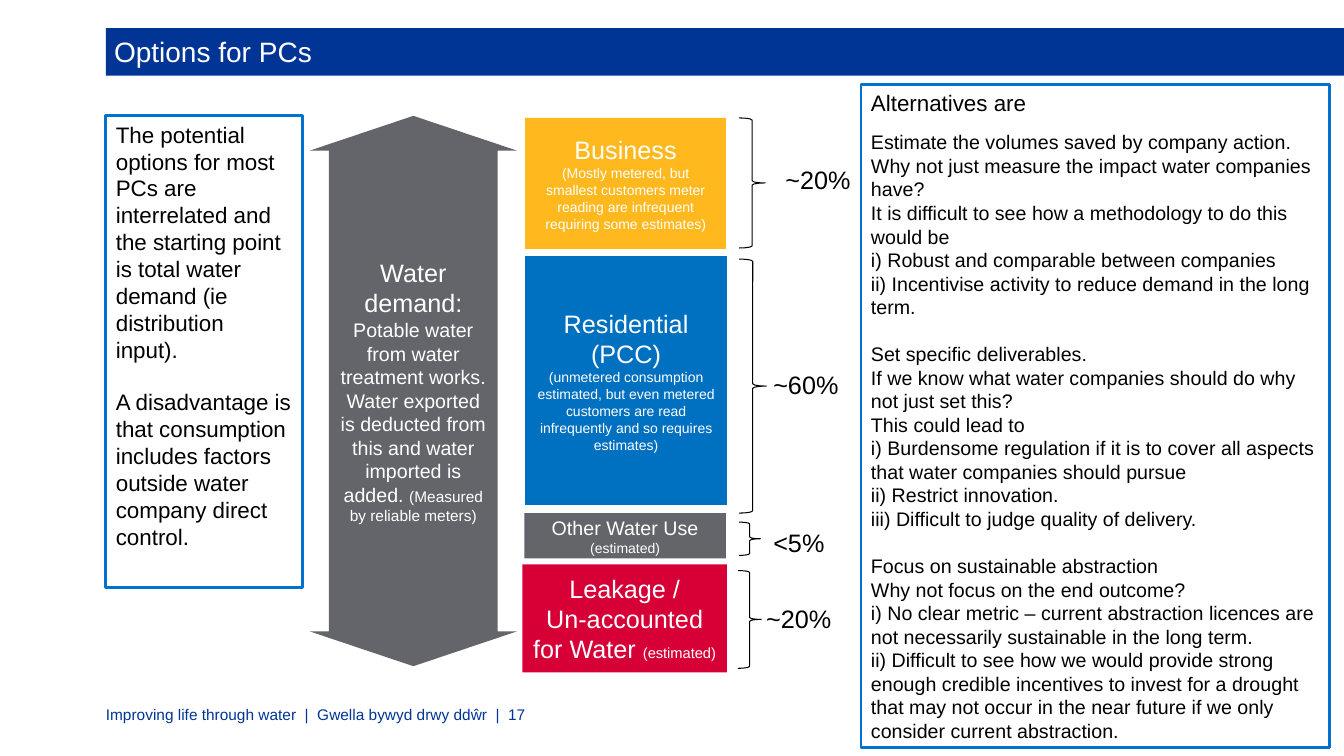
import lxml.etree
import pptx
import pptx.dml.color
import pptx.enum.shapes
import pptx.enum.text
import pptx.oxml.ns
import pptx.util

SHAPE = pptx.enum.shapes.MSO_SHAPE
ALIGN = pptx.enum.text.PP_ALIGN
ANCHOR = pptx.enum.text.MSO_ANCHOR
NAVY, BLUE, GREY, WHITE, BLACK = "003595", "0071CE", "63656A", "FFFFFF", "000000"
NO_BREAK_SPACE = chr(160)

deck = pptx.Presentation()
deck.slide_width = pptx.util.Inches(13.33)
deck.slide_height = pptx.util.Inches(7.5)
percent_wide, percent_high = deck.slide_width / 100, deck.slide_height / 100
slide = deck.slides.add_slide(deck.slide_layouts[6])


def paint(fill, color):
    if color:
        fill.solid()
        fill.fore_color.rgb = pptx.dml.color.RGBColor.from_string(color)
    else:
        fill.background()


def write(shape, text, size=18, color=WHITE, align=ALIGN.CENTER, gap=0, same_line=False):
    """Add a paragraph to the shape, or extend its last one when same_line is set."""
    frame = shape.text_frame
    if frame.text and not same_line:
        frame.add_paragraph()
    paragraph = frame.paragraphs[-1]
    if not same_line:
        paragraph.alignment = align
        paragraph.space_before = pptx.util.Pt(gap)
    run = paragraph.add_run()
    run.text = text
    run.font.name = "Arial"
    run.font.size = pptx.util.Pt(size)
    paint(run.font.fill, color)


# Left, top, width and height are percentages of the slide; insets are points.
inset, flush = (7.2, 3.6, 7.2, 3.6), (0, 0, 0, 0)
middle, top = ANCHOR.MIDDLE, ANCHOR.TOP
layout = {
    "footer": (SHAPE.RECTANGLE, (7.88, 93.2, 51.16, 2.53), None, None, middle, flush),
    "title": (SHAPE.RECTANGLE, (7.88, 3.73, 92.12, 6.27), NAVY, None, middle, (5.8, 2.9, 28, 3.2)),
    "residential": (SHAPE.RECTANGLE, (39.08, 33.87, 15, 32.93), "0070C0", None, middle, inset),
    "business": (SHAPE.RECTANGLE, (39.08, 15.6, 14.93, 17.33), "FFB81D", None, middle, inset),
    "other use": (SHAPE.RECTANGLE, (39.01, 67.87, 15, 6), GREY, None, middle, inset),
    "leakage": (SHAPE.RECTANGLE, (38.86, 74.67, 15.23, 14.27), "D60037", None, middle, inset),
    "demand": (SHAPE.UP_DOWN_ARROW, (23.03, 15.33, 15.45, 72.8), GREY, None, middle, inset),
    "starting point": (SHAPE.RECTANGLE, (7.88, 15.33, 14.63, 62.4), WHITE, BLUE, top, inset),
    "alternatives": (SHAPE.RECTANGLE, (64.07, 11.2, 34.88, 87.73), WHITE, BLUE, top, (7.2, 3, 7.2, 0)),
}

# Brace area, then left and top of the share of demand written beside it.
demand_shares = [
    ("~20%", (54.99, 15.6, 1.95, 17.2), (58.44, 21.73)),
    ("~60%", (54.99, 34.27, 2.03, 33.6), (57.54, 48.8)),
    ("<5%", (54.99, 69.07, 1.58, 4.4), (57.54, 69.73)),
    ("~20%", (54.91, 75.47, 1.73, 12.93), (57.01, 79.87)),
]
for number, (share, brace_area, share_corner) in enumerate(demand_shares):
    layout[f"brace {number}"] = (SHAPE.RIGHT_BRACE, brace_area, None, BLACK, middle, flush)
    layout[f"share {number}"] = (SHAPE.RECTANGLE, (*share_corner, 5.5, 4), None, None, top, flush)

parts = {}
for part, (kind, (left, upper, width, height), fill, line, anchor, insets) in layout.items():
    shape = slide.shapes.add_shape(
        kind, int(left * percent_wide), int(upper * percent_high),
        int(width * percent_wide), int(height * percent_high))
    shape.shadow.inherit = False
    paint(shape.fill, fill)
    paint(shape.line.fill, line)
    if line:
        shape.line.width = pptx.util.Pt(0.75 if kind == SHAPE.RIGHT_BRACE else 2)
    frame = shape.text_frame
    frame.word_wrap = True
    frame.vertical_anchor = anchor
    frame.margin_left, frame.margin_top, frame.margin_right, frame.margin_bottom = map(pptx.util.Pt, insets)
    parts[part] = shape

# Shaft width and head length of the double arrow, as shares of its width.
qn = pptx.oxml.ns.qn
guides = next(parts["demand"].element.iter(qn("a:avLst")))
for guide in list(guides):
    guides.remove(guide)
for guide_name, share_of_width in (("adj1", 81300), ("adj2", 16800)):
    lxml.etree.SubElement(guides, qn("a:gd"), name=guide_name, fmla=f"val {share_of_width}")

write(parts["footer"], "Improving life through water  |  Gwella bywyd drwy ddŵr  |  17",
      size=11, color=NAVY, align=ALIGN.LEFT)
write(parts["title"], "Options for PCs", size=20, align=ALIGN.LEFT)

write(parts["residential"], "Residential (PCC)")
write(parts["residential"], "(unmetered consumption estimated, but even metered customers are read "
      "infrequently and so requires estimates)", size=10)
write(parts["business"], "Business")
write(parts["business"], "(Mostly metered, but smallest customers meter reading are infrequent "
      "requiring some estimates)", size=10)
write(parts["other use"], "Other Water Use ", size=14)
write(parts["other use"], "(estimated)", size=10, same_line=True)
write(parts["leakage"], "Leakage /")
write(parts["leakage"], "Un-accounted for Water ")
write(parts["leakage"], "(estimated)", size=10.5, same_line=True)

for number, (share, *_) in enumerate(demand_shares):
    write(parts[f"share {number}"], share, color=BLACK, align=ALIGN.LEFT)

write(parts["demand"], "Water demand:")
write(parts["demand"], "Potable water from water treatment works. Water exported is deducted from "
      "this and water imported is added. ", size=14)
write(parts["demand"], "(Measured by reliable meters)", size=11, same_line=True)

write(parts["starting point"], "The potential options for most PCs are interrelated and the starting "
      "point is total water demand (ie distribution input)." + NO_BREAK_SPACE,
      size=16, color=BLACK, align=ALIGN.LEFT)
write(parts["starting point"], "A disadvantage is that consumption includes factors outside water "
      "company direct control.", size=16, color=BLACK, align=ALIGN.LEFT, gap=18.4)

write(parts["alternatives"], "Alternatives are", size=16, color=BLACK, align=ALIGN.LEFT)
alternatives = [
    (10.4, [
        "Estimate the volumes saved by company action.",
        "Why not just measure the impact water companies have?",
        "It is difficult to see how a methodology to do this would be",
        "i) Robust and comparable between companies",
        "ii) Incentivise activity to reduce demand in the long term.",
    ]),
    (16.8, [
        "Set specific deliverables.",
        "If we know what water companies should do why not just set this?",
        "This could lead to",
        "i) Burdensome regulation if it is to cover all aspects that water companies should pursue",
        "ii) Restrict innovation.",
        "iii) Difficult to judge quality of delivery.",
    ]),
    (16.8, [
        "Focus on sustainable abstraction",
        "Why not focus on the end outcome?",
        "i) No clear metric – current abstraction licences are not necessarily sustainable in the long term.",
        "ii) Difficult to see how we would provide strong enough credible incentives to invest for a "
        "drought that may not occur in the near future if we only consider current abstraction.",
    ]),
]
for gap_above, statements in alternatives:
    for position, statement in enumerate(statements):
        write(parts["alternatives"], statement, size=14, color=BLACK, align=ALIGN.LEFT,
              gap=0 if position else gap_above)

deck.save("out.pptx")
